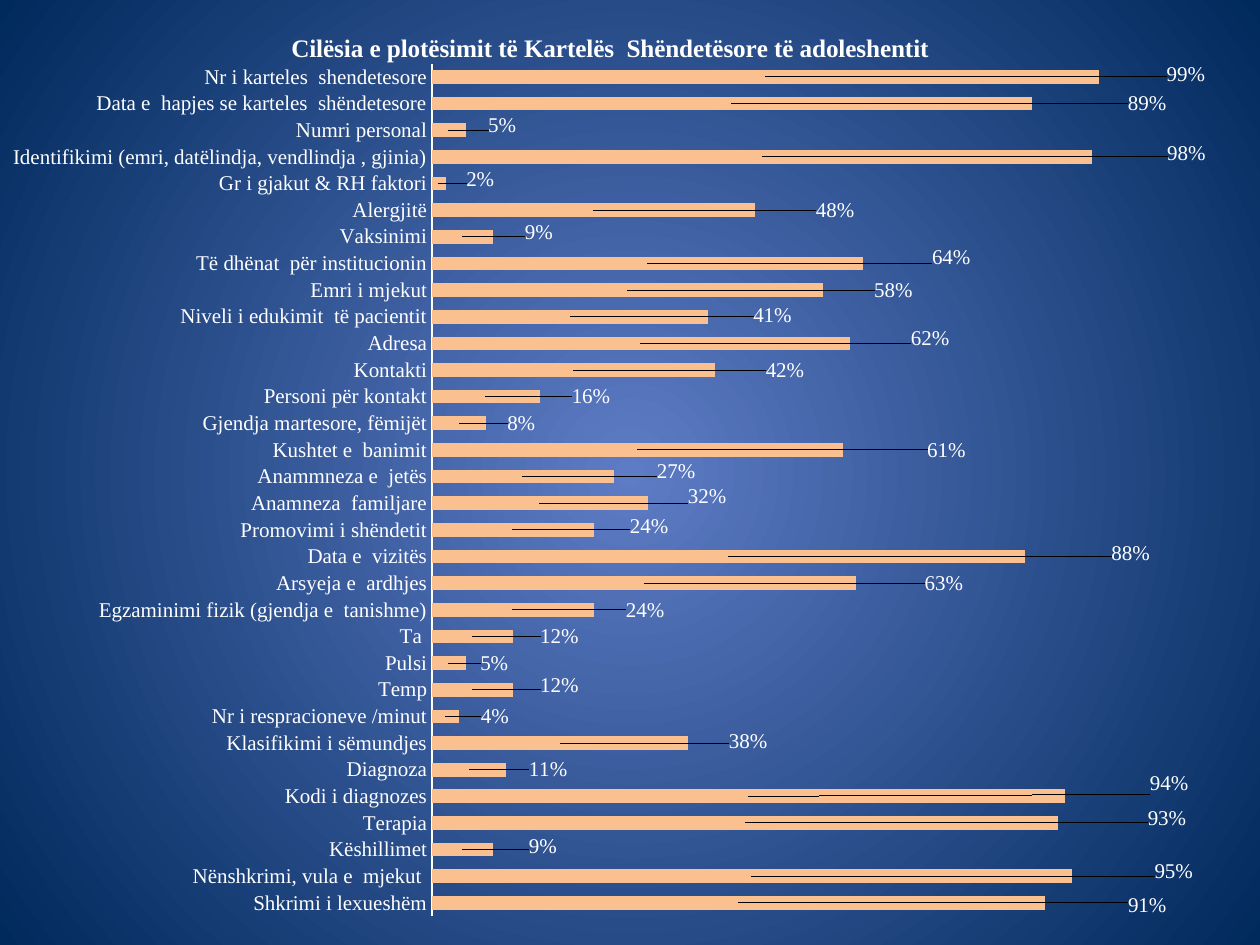
from lxml import etree
from pptx import Presentation
from pptx import util as u
from pptx.chart import data as chart_data
from pptx.dml import color
from pptx.enum import chart as chart_enum
from pptx.oxml import ns

FONT = "Times New Roman"
WHITE = "FFFFFF"
TITLE = "Cilësia e plotësimit të Kartelës  Shëndetësore të adoleshentit"

# name, share, label offset from the bar centre in percent of chart size
ROWS = [
    ("Nr i karteles  shendetesore", 0.99, 32.4, -0.3),
    ("Data e  hapjes se karteles  shëndetesore", 0.89, 32, 0),
    ("Numri personal", 0.05, 4.1, -0.5),
    ("Identifikimi (emri, datëlindja, vendlindja , gjinia)", 0.98, 32.7, -0.4),
    ("Gr i gjakut & RH faktori", 0.02, 3.2, -0.4),
    ("Alergjitë", 0.48, 18.6, 0),
    ("Vaksinimi", 0.09, 5.9, -0.5),
    ("Të dhënat  për institucionin", 0.64, 23.4, -0.7),
    ("Emri i mjekut", 0.58, 20.5, 0),
    ("Niveli i edukimit  të pacientit", 0.41, 15.6, -0.2),
    ("Adresa", 0.62, 22.3, -0.5),
    ("Kontakti", 0.42, 16.3, 0),
    ("Personi për kontakt", 0.16, 8.1, 0),
    ("Gjendja martesore, fëmijët", 0.08, 4.8, 0),
    ("Kushtet e  banimit", 0.61, 23.8, 0),
    ("Anammneza e  jetës", 0.27, 11.8, -0.6),
    ("Anamneza  familjare", 0.32, 12.9, -0.8),
    ("Promovimi i shëndetit", 0.24, 10.5, -0.4),
    ("Data e  vizitës", 0.88, 31, -0.4),
    ("Arsyeja e  ardhjes", 0.63, 23.1, 0),
    ("Egzaminimi fizik (gjendja e  tanishme)", 0.24, 10.2, 0),
    ("Ta ", 0.12, 6.7, 0),
    ("Pulsi", 0.05, 3.5, 0),
    ("Temp", 0.12, 6.7, -0.5),
    ("Nr i respracioneve /minut", 0.04, 3.8, 0),
    ("Klasifikimi i sëmundjes", 0.38, 14.5, -0.2),
    ("Diagnoza", 0.11, 6.1, 0),
    ("Kodi i diagnozes", 0.94, 32.4, -1.4),
    ("Terapia", 0.93, 32.5, -0.5),
    ("Këshillimet", 0.09, 6.2, -0.4),
    ("Nënshkrimi, vula e  mjekut ", 0.95, 32.5, -0.5),
    ("Shkrimi i lexueshëm", 0.91, 31.5, 0.2),
][::-1]


def rgb(value):
    return color.RGBColor.from_string(value)


def format_font(font, size=12, bold=False, fill=WHITE):
    font.name = FONT
    font.size = u.Pt(size)
    font.bold = bold
    font.color.rgb = rgb(fill)


def write_text(frame, content, **style):
    frame.text = content
    format_font(frame.paragraphs[0].runs[0].font, **style)


def manual_layout(**values):
    layout = etree.Element(ns.qn("c:layout"))
    manual = etree.SubElement(layout, ns.qn("c:manualLayout"))
    for name, value in values.items():
        etree.SubElement(manual, ns.qn("c:" + name)).set("val", str(value))
    return layout


def place_after(parent, sibling, layout):
    for old in parent.findall(ns.qn("c:layout")):
        parent.remove(old)
    parent.find(ns.qn("c:" + sibling)).addnext(layout)


def paint_background(slide, center, edge):
    fill = slide.background.fill
    fill.gradient()
    for stop, position, value in zip(fill.gradient_stops, (0, 1), (center, edge)):
        stop.position = position
        stop.color.rgb = rgb(value)
    gradient = next(slide.element.iter(ns.qn("a:gradFill")))
    for linear in gradient.findall(ns.qn("a:lin")):
        gradient.remove(linear)
    circle = etree.SubElement(gradient, ns.qn("a:path"), {"path": "circle"})
    etree.SubElement(circle, ns.qn("a:fillToRect"), dict.fromkeys("ltrb", "50000"))


def add_bar_chart(slide):
    data = chart_data.CategoryChartData(number_format="0%")
    data.categories = [row[0] for row in ROWS]
    data.add_series("Series 1", [row[1] for row in ROWS])
    chart = slide.shapes.add_chart(
        chart_enum.XL_CHART_TYPE.BAR_STACKED,
        u.Cm(-0.76), u.Cm(0), u.Cm(26.16), u.Cm(18.87), data).chart
    chart.has_legend = False
    format_font(chart.font)
    return chart


def format_title(chart):
    write_text(chart.chart_title.text_frame, TITLE, size=14.4, bold=True)
    chart.chart_title.include_in_layout = False
    title = next(chart.element.iter(ns.qn("c:title")))
    place_after(title, "tx", manual_layout(xMode="edge", yMode="edge", x=0.25, y=0.03))


def format_axes(chart):
    category = chart.category_axis
    category.major_tick_mark = chart_enum.XL_TICK_MARK.NONE
    category.has_major_gridlines = False
    category.format.line.color.rgb = rgb(WHITE)
    category.format.line.width = u.Pt(0.75)
    format_font(category.tick_labels.font)
    value = chart.value_axis
    value.minimum_scale, value.maximum_scale = 0, 1.2
    value.has_major_gridlines = False
    value.visible = False
    area = next(chart.element.iter(ns.qn("c:plotArea")))
    for old in area.findall(ns.qn("c:layout")):
        area.remove(old)
    area.insert(0, manual_layout(layoutTarget="inner", xMode="edge", yMode="edge",
                                 x=0.362, y=0.068, w=0.623, h=0.911))


def format_bars(chart):
    plot = chart.plots[0]
    plot.gap_width, plot.overlap = 95, 100
    plot.vary_by_categories = False
    series = plot.series[0]
    series.format.fill.solid()
    series.format.fill.fore_color.rgb = rgb("FAC08F")
    labels = series.data_labels
    labels.show_value = True
    labels.number_format = "0%"
    labels.number_format_is_linked = False
    format_font(labels.font)
    for index in range(len(ROWS)):
        format_font(series.points[index].data_label.font)
    for label, (_, _, right, down) in zip(chart.element.iter(ns.qn("c:dLbl")), ROWS):
        place_after(label, "idx", manual_layout(x=round(right / 100, 3), y=round(down / 100, 3)))


def main():
    presentation = Presentation()
    presentation.slide_width, presentation.slide_height = u.Cm(25.4), u.Cm(19.05)
    slide = presentation.slides.add_slide(presentation.slide_layouts[6])
    paint_background(slide, "5E7CC5", "00295C")
    chart = add_bar_chart(slide)
    format_title(chart)
    format_axes(chart)
    format_bars(chart)
    presentation.save("out.pptx")


if __name__ == "__main__":
    main()
